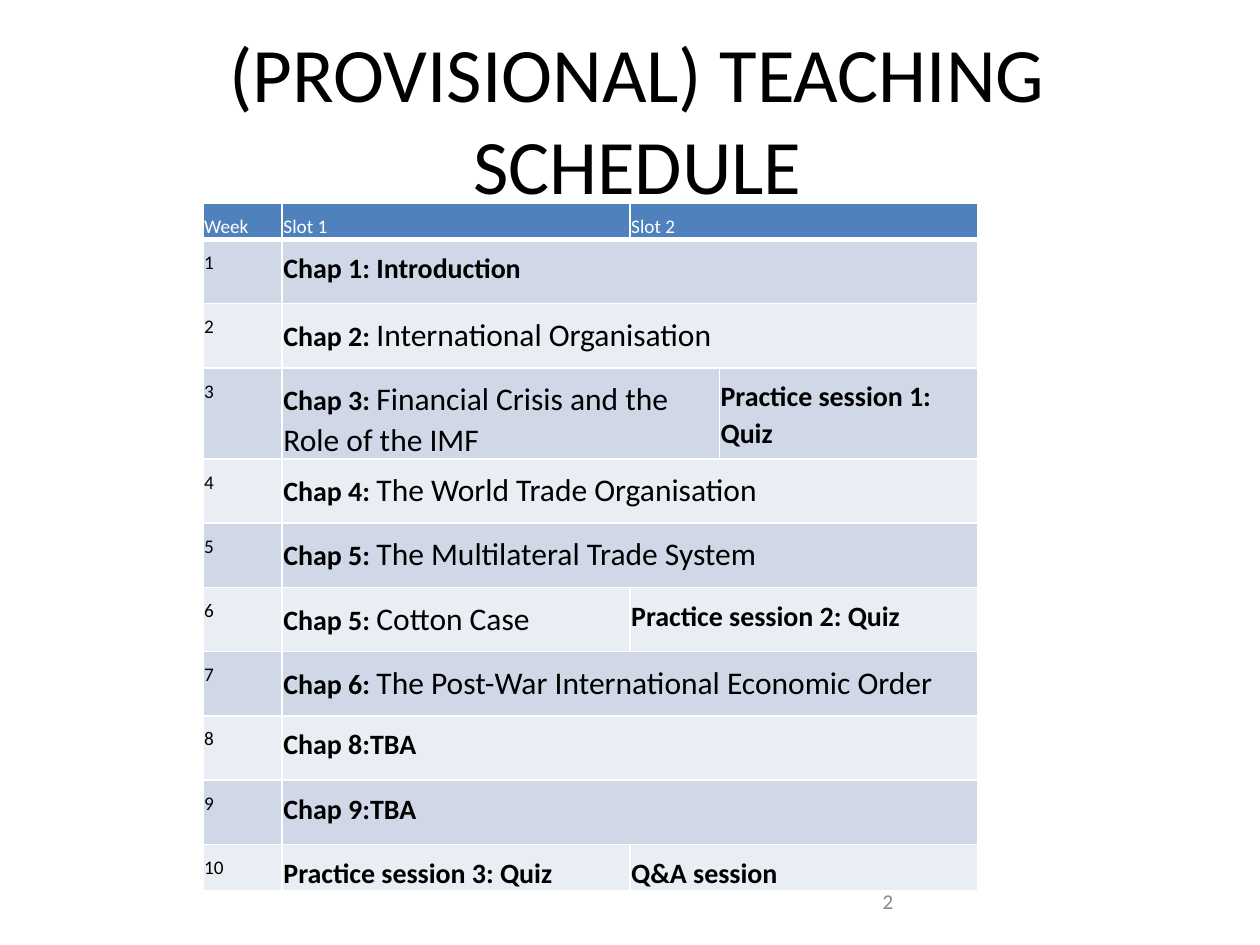
import pptx
import pptx.util
import pptx.dml.color
import pptx.enum.text
import pptx.oxml
import pptx.oxml.ns
from lxml import etree

Inches, Pt = pptx.util.Inches, pptx.util.Pt
RGBColor = pptx.dml.color.RGBColor
PP_ALIGN = pptx.enum.text.PP_ALIGN
MSO_ANCHOR = pptx.enum.text.MSO_ANCHOR
MSO_AUTO_SIZE = pptx.enum.text.MSO_AUTO_SIZE

BLACK = RGBColor(0x00, 0x00, 0x00)
WHITE = RGBColor(0xFF, 0xFF, 0xFF)
GREY = RGBColor(0x88, 0x88, 0x88)
HEADER_BLUE = RGBColor(0x4F, 0x81, 0xBD)
BANDS = (RGBColor(0xD0, 0xD8, 0xE8), RGBColor(0xE9, 0xED, 0xF4))

SMALL = {"size": Pt(11), "bold": False}
STRONG = {"size": Pt(16), "bold": True}
TOPIC = {"size": Pt(18), "bold": False}

COLUMN_WIDTHS = (0.63, 2.76, 0.71, 2.05)
END_ROW_HEIGHT, WEEK_HEIGHT = 0.29, 0.51

# Each week lists its slots: (columns spanned, bold text, plain topic).
WEEKS = (
    [(3, "Chap 1: Introduction", "")],
    [(3, "Chap 2: ", "International Organisation")],
    [(2, "Chap 3: ", "Financial Crisis and the Role of the IMF"),
     (1, "Practice session 1: Quiz", "")],
    [(3, "Chap 4: ", "The World Trade Organisation")],
    [(3, "Chap 5: ", "The Multilateral Trade System")],
    [(1, "Chap 5: ", "Cotton Case"), (2, "Practice session 2: Quiz", "")],
    [(3, "Chap 6: ", "The Post-War International Economic Order")],
    [(3, "Chap 8:TBA", "")],
    [(3, "Chap 9:TBA", "")],
    [(1, "Practice session 3: Quiz", ""), (2, "Q&A session", "")],
)


def apply(target, formats):
    for name, value in formats.items():
        setattr(target, name, value)


def add_span(para, text, color, formats):
    span = para.add_run()
    span.text = text
    apply(span.font, {"name": "Calibri", **formats})
    span.font.color.rgb = color


def place(shape, box):
    apply(shape, dict(zip(("left", "top", "width", "height"), map(Inches, box))))


def format_frame(frame, top_inset=0):
    apply(frame, {
        "margin_left": 0, "margin_right": 0, "margin_bottom": 0,
        "margin_top": Inches(top_inset), "word_wrap": True,
        "vertical_anchor": MSO_ANCHOR.MIDDLE,
        "auto_size": MSO_AUTO_SIZE.SHAPE_TO_FIT_TEXT,
    })


def add_title(page, box):
    title = page.shapes.title
    place(title, box)
    format_frame(title.text_frame, top_inset=0.01)
    para = title.text_frame.paragraphs[0]
    apply(para, {"alignment": PP_ALIGN.CENTER, "space_before": Pt(1.1)})
    add_span(para, "(PROVISIONAL) TEACHING SCHEDULE", BLACK, {"size": Pt(44)})


def add_page_number(page, box):
    shape = page.shapes.add_textbox(*map(Inches, box))
    format_frame(shape.text_frame)
    para = shape.text_frame.paragraphs[0]
    apply(para, {"alignment": PP_ALIGN.RIGHT, "line_spacing": Pt(12.4)})
    add_span(para, "2", GREY, {"size": Pt(12)})


def add_borders(cell, bottom_width):
    """Draw white cell borders, placed before the fill as the schema asks."""
    properties = cell._tc.get_or_add_tcPr()
    widths = {"lnL": 1, "lnR": 1, "lnT": 1, "lnB": bottom_width}
    for position, (side, width) in enumerate(widths.items()):
        line = etree.Element(pptx.oxml.ns.qn("a:" + side), w=str(Pt(width)))
        fill = etree.SubElement(line, pptx.oxml.ns.qn("a:solidFill"))
        etree.SubElement(fill, pptx.oxml.ns.qn("a:srgbClr"), val=str(WHITE))
        properties.insert(position, line)


def fill_row(table, row, slots, fill, color, bottom_width=1):
    """Fill one row from slots of (columns spanned, [(text, formats), ...])."""
    for column in range(len(COLUMN_WIDTHS)):
        cell = table.cell(row, column)
        apply(cell, {"margin_left": Inches(0.01), "margin_right": Inches(0.01),
                     "margin_top": Inches(0.08), "margin_bottom": 0})
        cell.fill.solid()
        cell.fill.fore_color.rgb = fill
        add_borders(cell, bottom_width)
    column = 0
    for columns, spans in slots:
        cell = table.cell(row, column)
        if columns > 1:
            cell.merge(table.cell(row, column + columns - 1))
        para = cell.text_frame.paragraphs[0]
        apply(para, {"line_spacing": 1.07, "space_after": Pt(8)})
        for text, formats in spans:
            if text:
                add_span(para, text, color, formats)
        column += columns


def add_schedule(page, box):
    frame = page.shapes.add_table(len(WEEKS) + 1, len(COLUMN_WIDTHS),
                                  *map(Inches, box))
    table = frame.table
    for column, width in zip(table.columns, COLUMN_WIDTHS):
        column.width = Inches(width)
    last = len(WEEKS)
    for index, row in enumerate(table.rows):
        row.height = Inches(END_ROW_HEIGHT if index in (0, last) else WEEK_HEIGHT)
    header = [(1, [("Week", SMALL)]), (1, [("Slot 1", SMALL)]),
              (2, [("Slot 2", SMALL)])]
    fill_row(table, 0, header, HEADER_BLUE, WHITE, bottom_width=3)
    for week, sessions in enumerate(WEEKS, start=1):
        slots = [(1, [(str(week), SMALL)])]
        slots += [(columns, [(strong, STRONG), (topic, TOPIC)])
                  for columns, strong, topic in sessions]
        fill_row(table, week, slots, BANDS[(week - 1) % 2], BLACK)


def main():
    deck = pptx.Presentation()
    apply(deck, {"slide_width": Inches(10), "slide_height": Inches(7.5)})
    page = deck.slides.add_slide(deck.slide_layouts.get_by_name("Title Only"))
    add_page_number(page, (6.89, 7.08, 0.2, 0.17))
    add_title(page, (0.75, 0.18, 8.62, 1.5))
    add_schedule(page, (1.61, 1.61, 6.15, 5.44))
    deck.save("out.pptx")


if __name__ == "__main__":
    main()
